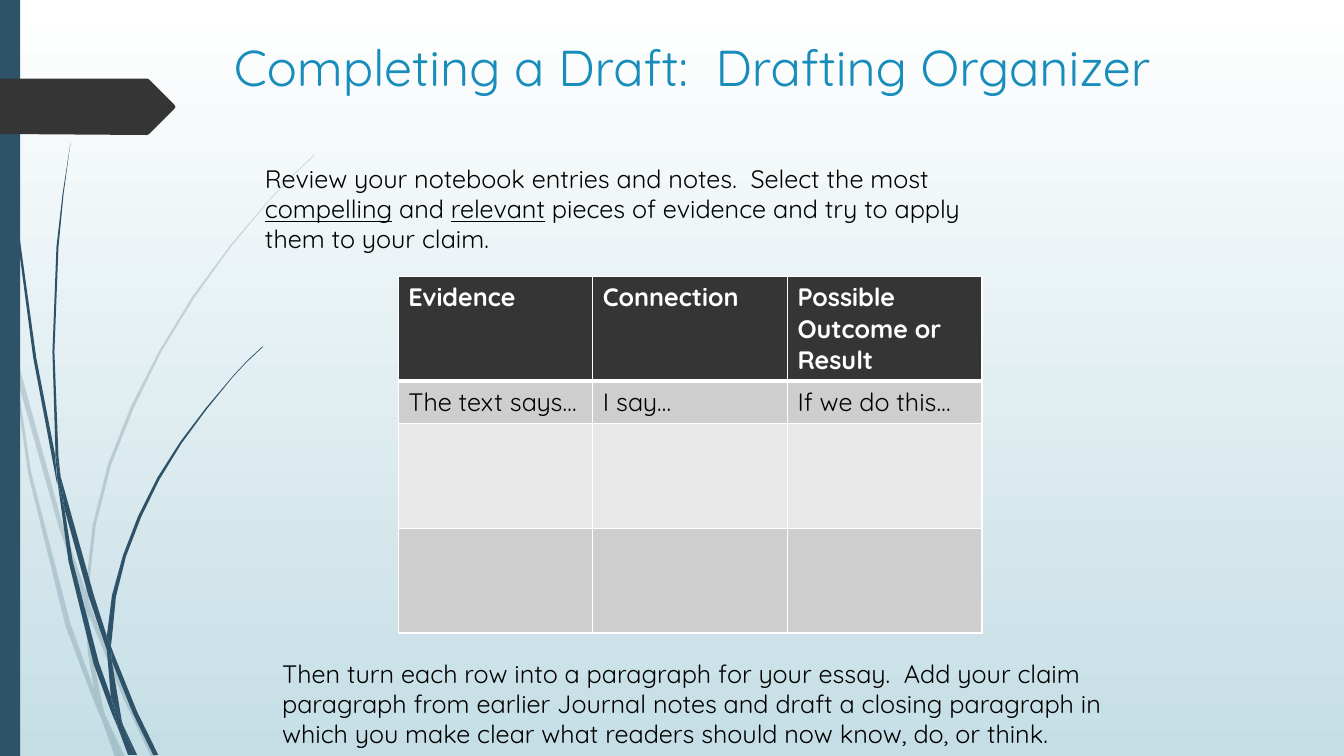
from lxml.etree import SubElement
from pptx import Presentation
from pptx.dml.color import RGBColor
from pptx.enum.shapes import MSO_SHAPE
from pptx.enum.text import MSO_ANCHOR, MSO_AUTO_SIZE, PP_ALIGN
from pptx.oxml.ns import qn
from pptx.util import Inches, Pt

FONT = "Quicksand"
HUES = {
    "white": "FFFFFF", "mist": "C5DEE5", "navy": "2E5369", "coal": "353535",
    "title": "178DBB", "black": "000000", "band": "CECECE", "pale": "E8E8E8",
}

# Grass: the corners of each leaf part, as x and y in inches
FAINT = [
    [(0.11, 3.5), (0.09, 3.22), (0, 2.82), (0, 2.99), (0.1, 3.44)],
    [(0.58, 5.22), (0.84, 5.99), (0.85, 5.86), (0.62, 5.2), (0.14, 3.45), (0.17, 3.76)],
    [(0.92, 6.07), (0.88, 5.96), (0.88, 6.1), (1.23, 6.94), (1.5, 7.51), (1.55, 7.51),
     (1.27, 6.92)],
    [(1.19, 7.51), (1.24, 7.51), (1.05, 7.11)],
    [(0.93, 6.83), (0.7, 6.19), (0.31, 4.69), (0.17, 3.76), (0.11, 3.5), (0.28, 4.7),
     (0.65, 6.21), (0.92, 6.93), (1.01, 7.14), (0.99, 7.07)],
    [(0.84, 5.99), (0.87, 6.46), (0.93, 6.83), (0.96, 6.92), (1.05, 7.11), (1.03, 7.06),
     (0.91, 6.46), (0.88, 6.1), (0.88, 6.08)],
    [(0.88, 5.84), (0.95, 5.21), (1.1, 4.62), (1.33, 4.04), (1.6, 3.49), (1.93, 2.95),
     (2.29, 2.45), (2.68, 1.98), (2.9, 1.75), (3.12, 1.54), (3.12, 1.53), (2.89, 1.75),
     (2.68, 1.97), (2.28, 2.44), (1.91, 2.94), (1.58, 3.48), (1.3, 4.03), (1.07, 4.61),
     (0.92, 5.21), (0.85, 5.84), (0.85, 5.86), (0.88, 5.96)],
    [(1.01, 7.14), (1.14, 7.51), (1.19, 7.51)],
    [(0.88, 6.08), (0.88, 6.1), (0.88, 5.96), (0.85, 5.86), (0.84, 5.99)],
    [(0.96, 6.92), (0.93, 6.83), (0.99, 7.07), (1.01, 7.14), (1.19, 7.51), (1.05, 7.11)],
]
STRONG = [
    [(0.07, 1.1), (0.17, 2.33), (0.33, 3.55), (0.56, 4.77), (0.57, 4.81), (0.55, 4.57),
     (0.55, 4.53), (0.36, 3.55), (0.19, 2.32), (0.08, 1.09), (0.05, 0.48), (0.04, 0),
     (0.03, 0), (0.04, 0.48)],
    [(0.88, 5.92), (1.06, 6.45), (1.06, 6.33), (1.06, 6.31), (0.93, 5.9), (0.6, 4.72),
     (0.64, 5.05)],
    [(1.13, 6.49), (1.1, 6.41), (1.11, 6.56), (1.32, 7.08), (1.52, 7.49), (1.57, 7.49),
     (1.36, 7.06)],
    [(1.1, 6.91), (0.98, 6.57), (0.72, 5.56), (0.64, 5.05), (0.57, 4.77), (0.68, 5.57),
     (0.93, 6.59), (1.11, 7.08), (1.17, 7.22), (1.16, 7.17)],
    [(0.6, 4.72), (0.58, 4.53), (0.54, 3.49), (0.58, 2.45), (0.63, 1.93), (0.7, 1.41),
     (0.62, 1.93), (0.56, 2.45), (0.52, 3.49), (0.55, 4.49)],
    [(1.33, 7.49), (1.36, 7.49), (1.22, 7.19)],
    [(0.57, 4.77), (0.64, 5.05), (0.6, 4.72), (0.55, 4.49), (0.55, 4.53)],
    [(1.11, 6.33), (1.15, 5.92), (1.25, 5.52), (1.4, 5.13), (1.58, 4.76), (1.8, 4.4),
     (2.05, 4.06), (2.31, 3.74), (2.45, 3.59), (2.61, 3.44), (2.6, 3.44), (2.45, 3.58),
     (2.31, 3.73), (2.04, 4.05), (1.79, 4.38), (1.56, 4.74), (1.37, 5.12), (1.22, 5.51),
     (1.11, 5.91), (1.06, 6.31), (1.1, 6.41)],
    [(1.17, 7.22), (1.27, 7.49), (1.31, 7.49)],
    [(1.06, 6.45), (1.1, 6.91), (1.16, 7.06), (1.22, 7.19), (1.21, 7.16), (1.11, 6.56),
     (1.09, 6.51)],
    [(1.06, 6.45), (1.09, 6.51), (1.11, 6.56), (1.1, 6.41), (1.06, 6.31), (1.06, 6.33)],
    [(1.16, 7.06), (1.1, 6.91), (1.16, 7.17), (1.17, 7.22), (1.3, 7.49), (1.33, 7.49),
     (1.22, 7.19)],
]
TAG = [(0, 0.78), (1.46, 0.78), (1.48, 0.79), (1.73, 1.04), (1.74, 1.06),
       (1.73, 1.08), (1.48, 1.33), (1.46, 1.34), (0, 1.33)]

ROWS = [
    # height, fill, text colour, words
    (1.03, "coal", "white", ["Evidence", "Connection", "Possible Outcome or Result"]),
    (0.42, "band", "black", ["The text says…", "I say…", "If we do this…"]),
    (1.04, "pale", "black", []),
    (1.04, "band", "black", []),
]

INTRO = [
    ("Review your notebook entries and notes.  Select the most ", False),
    ("compelling", True), (" and ", False), ("relevant", True),
    (" pieces of evidence and try to apply them to your claim.", False),
]
CLOSE = [
    ("Then turn each row into a paragraph for your essay.  Add your claim "
     "paragraph from earlier Journal notes and draft a closing paragraph in "
     "which you make clear what readers should now know, do, or think.", False),
]


def color(name):
    return RGBColor.from_string(HUES[name])


def style(para, size, name, bold=False):
    font = para.font
    font.name, font.size, font.bold = FONT, Pt(size), bold
    font.color.rgb = color(name)


def paint(shape, name, alpha=100):
    shape.fill.solid()
    shape.fill.fore_color.rgb = color(name)
    shape.line.fill.background()
    shape.shadow.inherit = False
    if alpha < 100:
        tint = shape.element.spPr.find(qn("a:solidFill"))[0]
        SubElement(tint, qn("a:alpha"), val=str(alpha * 1000))


def add_form(slide, points, name, alpha=100):
    edge = [(Inches(x), Inches(y)) for x, y in points]
    build = slide.shapes.build_freeform(*edge[0])
    build.add_line_segments(edge[1:], close=True)
    paint(build.convert_to_shape(), name, alpha)


def add_note(slide, left, top, width, height, parts):
    box = slide.shapes.add_textbox(
        Inches(left), Inches(top), Inches(width), Inches(height))
    frame = box.text_frame
    frame.word_wrap = True
    frame.auto_size = MSO_AUTO_SIZE.SHAPE_TO_FIT_TEXT
    para = frame.paragraphs[0]
    style(para, 18, "black")
    for words, under in parts:
        run = para.add_run()
        run.text = words
        if under:
            run.font.underline = True


def add_rules(cell, widths):
    props = cell._tc.get_or_add_tcPr()
    for side, width in widths.items():
        line = SubElement(props, qn(f"a:ln{side}"), w=str(Pt(width)))
        fill = SubElement(line, qn("a:solidFill"))
        SubElement(fill, qn("a:srgbClr"), val=HUES["white"])


def add_grid(slide):
    high = sum(row[0] for row in ROWS)
    grid = slide.shapes.add_table(
        len(ROWS), 3, Inches(3.95), Inches(2.74), Inches(5.79), Inches(high)).table
    for r, (height, fill, ink, words) in enumerate(ROWS):
        grid.rows[r].height = Inches(height)
        for c, cell in enumerate(grid.rows[r].cells):
            add_rules(cell, {"L": 1, "R": 1, "T": 3 if r == 1 else 1,
                             "B": 3 if r == 0 else 1})
            cell.fill.solid()
            cell.fill.fore_color.rgb = color(fill)
            if words:
                cell.text = words[c]
            style(cell.text_frame.paragraphs[0], 18, ink, bold=r == 0)


def set_title(slide, words):
    title = slide.shapes.title
    title.left, title.top = Inches(2.22), Inches(0.31)
    title.width, title.height = Inches(10.05), Inches(1.4)
    frame = title.text_frame
    frame.text = words
    frame.auto_size = MSO_AUTO_SIZE.NONE
    frame.vertical_anchor = MSO_ANCHOR.TOP
    para = frame.paragraphs[0]
    para.alignment = PP_ALIGN.LEFT
    style(para, 36, "title")


def set_back(slide):
    fill = slide.background.fill
    fill.gradient()
    fill.gradient_angle = 270
    for stop, name in zip(fill.gradient_stops, ("white", "mist")):
        stop.color.rgb = color(name)


def main():
    deck = Presentation()
    deck.slide_width, deck.slide_height = Inches(13.33), Inches(7.5)
    slide = deck.slides.add_slide(deck.slide_layouts[5])

    # Backdrop
    set_back(slide)
    for alpha, leaves in ((20, FAINT), (100, STRONG)):
        for leaf in leaves:
            add_form(slide, leaf, "navy", alpha)
    bar = slide.shapes.add_shape(
        MSO_SHAPE.RECTANGLE, 0, 0, Inches(0.2), Inches(7.5))
    paint(bar, "navy")
    add_form(slide, TAG, "coal")

    # Content
    set_title(slide, "Completing a Draft:  Drafting Organizer")
    add_grid(slide)
    add_note(slide, 2.53, 1.57, 7.63, 1.01, INTRO)
    add_note(slide, 2.7, 6.48, 8.64, 1.01, CLOSE)
    deck.save("out.pptx")


if __name__ == "__main__":
    main()
